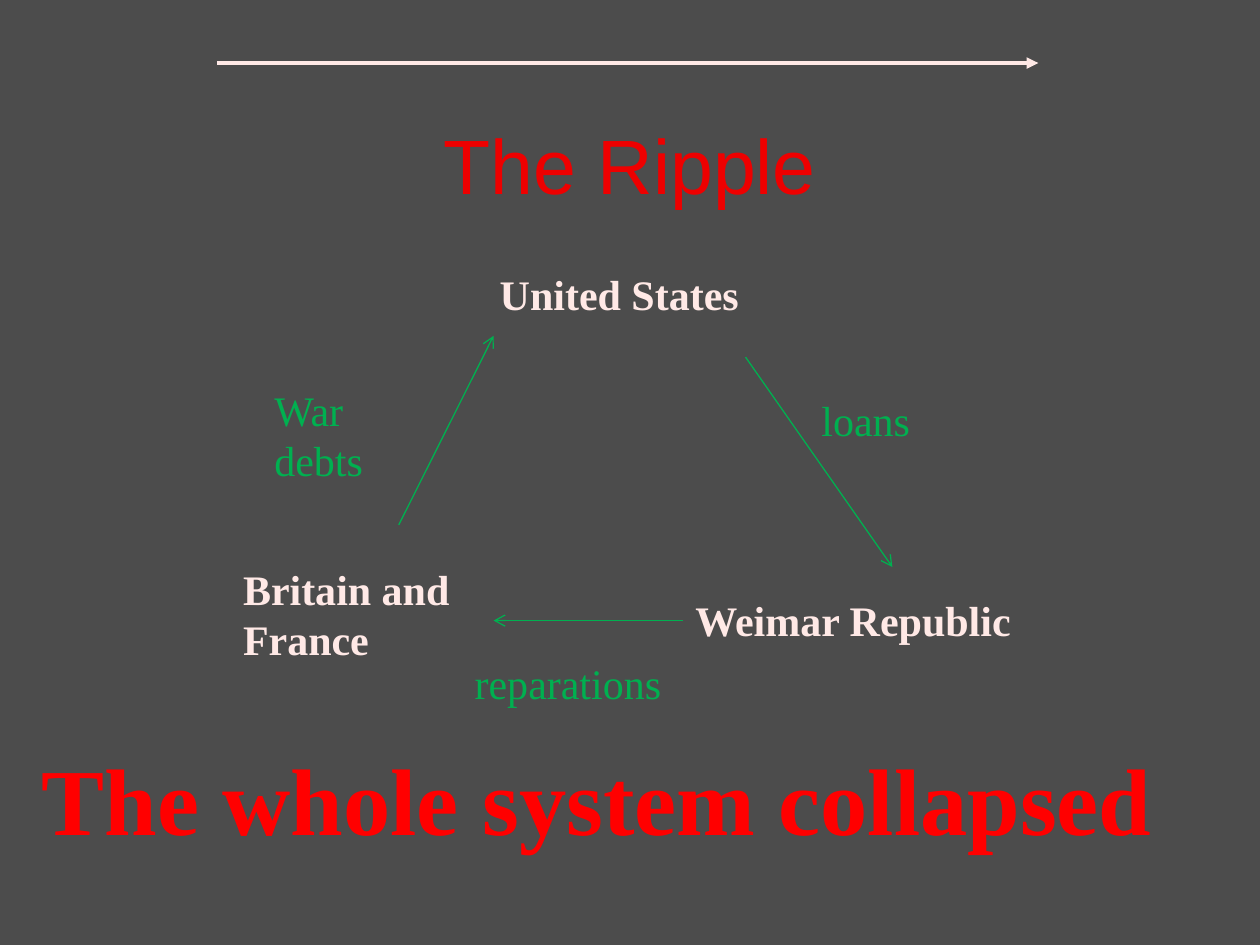
"""Build the slide on the ripple of loans, reparations and war debts."""
import dataclasses

import lxml.etree
import pptx
import pptx.dml.color
import pptx.enum.shapes
import pptx.enum.text
import pptx.oxml.ns
import pptx.util

Cm = pptx.util.Cm
Pt = pptx.util.Pt
Rgb = pptx.dml.color.RGBColor.from_string
Align = pptx.enum.text.PP_ALIGN
qn = pptx.oxml.ns.qn


@dataclasses.dataclass
class Theme:
    back: str = "4C4C4C"
    pale: str = "FFE9E6"
    green: str = "00B050"
    title: str = "EE0000"
    red: str = "FF0000"
    sans: str = "Arial"
    serif: str = "Times New Roman"
    head: int = 44
    body: int = 24
    big: int = 54


theme = Theme()


def write(shape, text, face, size, color, bold, align, wrap):
    frame = shape.text_frame
    frame.word_wrap = wrap
    frame.text = text
    para = frame.paragraphs[0]
    para.alignment = align
    para.font.name = face
    para.font.size = Pt(size)
    para.font.bold = bold
    para.font.color.rgb = Rgb(color)


def arrow(start, end, color, width, tip):
    line = slide.shapes.add_connector(
        pptx.enum.shapes.MSO_CONNECTOR.STRAIGHT, *map(Cm, start + end))
    line.line.color.rgb = Rgb(color)
    line.line.width = Pt(width)
    lxml.etree.SubElement(line.line._get_or_add_ln(), qn("a:tailEnd"), type=tip)
    lxml.etree.SubElement(line._element.spPr, qn("a:effectLst"))
    return line


deck = pptx.Presentation()
deck.slide_width = Cm(25.4)
deck.slide_height = Cm(19.05)
slide = deck.slides.add_slide(deck.slide_layouts[5])
slide.background.fill.solid()
slide.background.fill.fore_color.rgb = Rgb(theme.back)

arrow((4.37, 1.27), (20.93, 1.27), theme.pale, 2.25, "triangle")

title = slide.shapes.title
title.left, title.top, title.width, title.height = map(Cm, (1.9, 1.7, 21.6, 3.18))
title.text_frame.vertical_anchor = pptx.enum.text.MSO_ANCHOR.MIDDLE
write(title, "The Ripple", theme.sans, theme.head, theme.title, False,
      Align.CENTER, True)

nation = (theme.body, theme.pale, True)
flow = (theme.body, theme.green, False)
close = (theme.big, theme.red, True)
labels = [
    ("United States", (8.46, 5.28, 8.05, 1.3), nation, Align.CENTER, True),
    ("Weimar Republic", (13.77, 11.86, 6.93, 1.3), nation, Align.LEFT, False),
    ("Britain and France", (4.65, 11.23, 4.88, 2.31), nation, Align.LEFT, True),
    ("loans", (16.31, 7.82, 3.18, 1.3), flow, Align.LEFT, True),
    ("reparations", (9.32, 13.13, 4.45, 1.3), flow, Align.LEFT, True),
    ("War debts", (5.28, 7.62, 2.97, 2.31), flow, Align.LEFT, True),
    ("The whole system collapsed", (0.48, 14.81, 23.11, 2.57), close,
     Align.CENTER, False),
]
boxes = {}
for text, place, style, align, wrap in labels:
    boxes[text] = slide.shapes.add_textbox(*map(Cm, place))
    write(boxes[text], text, theme.serif, *style, align, wrap)

routes = {
    "loans": ((15.03, 7.2), (17.99, 11.43)),
    "reparations": ((13.77, 12.51), (9.95, 12.51)),
    "debts": ((8.04, 10.58), (9.95, 6.77)),
}
lines = {name: arrow(*ends, theme.green, 0.75, "arrow")
         for name, ends in routes.items()}
lines["reparations"].begin_connect(boxes["Weimar Republic"], 1)

deck.save("out.pptx")
